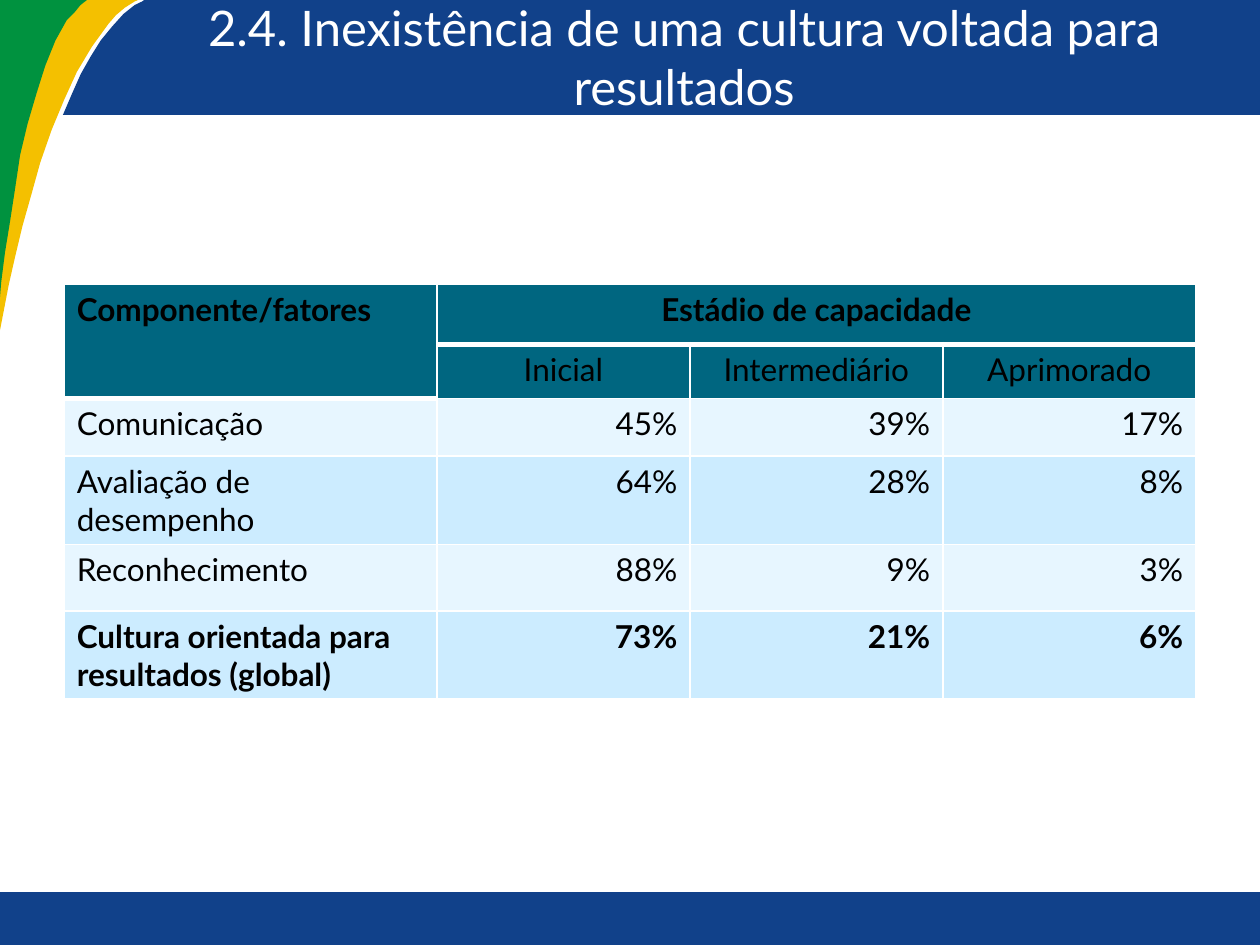
import pptx
import pptx.util
import pptx.dml.color
import pptx.enum.shapes
import pptx.enum.text
import pptx.oxml
import pptx.oxml.ns

Pt = pptx.util.Pt
ALIGN = pptx.enum.text.PP_ALIGN
FONT = "Lato"
BLUE, YELLOW, GREEN = "11418A", "F4C000", "00923F"
TEAL, PALE, LIGHT = "006680", "E7F6FF", "CCECFF"
WHITE, BLACK = "FFFFFF", "000000"

BAND = [(49.7, 0), (686.2, 0), (686.2, 67), (0, 67), (5, 55.4), (10.1, 43.9),
        (15.8, 33.8), (21.6, 24.5), (28.1, 16.6), (34.6, 9.4), (41, 4.3),
        (45.4, 2.2), (48.2, 0)]
YELLOW_SWEEP = [(0, 207.4), (0.7, 199.4), (2.9, 190.1), (7.9, 164.2), (11.5, 148.3),
                (15.8, 130.3), (20.9, 112.3), (25.9, 94.3), (32.4, 75.6), (39.6, 58.3),
                (46.8, 42.5), (55.4, 28.1), (64.8, 15.1), (69.1, 10.1), (74.2, 5.8),
                (79.9, 2.2), (85, 0), (0, 0)]
GREEN_SWEEP = [(0, 207.4), (0.7, 199.4), (1.4, 189.4), (3.6, 162.7), (5.8, 145.4),
               (8.6, 128.2), (11.5, 109.4), (14.4, 90), (18.7, 72), (23.8, 54.7),
               (28.8, 38.9), (34.6, 24.5), (41, 13), (45.4, 8.6), (48.9, 4.3),
               (52.6, 1.4), (56.9, 0), (0, 0)]

HEADINGS = ["Inicial", "Intermediário", "Aprimorado"]
ROWS = [
    ["Comunicação", "45%", "39%", "17%"],
    ["Avaliação de desempenho", "64%", "28%", "8%"],
    ["Reconhecimento", "88%", "9%", "3%"],
    ["Cultura orientada para resultados (global)", "73%", "21%", "6%"],
]


def rgb(color):
    return pptx.dml.color.RGBColor.from_string(color)


def paint(sp, color):
    sp.fill.solid()
    sp.fill.fore_color.rgb = rgb(color)
    sp.line.fill.background()
    sp.shadow.inherit = False


def write(tf, text, size, color, align, bold=False):
    p = tf.paragraphs[0]
    p.text = text
    p.alignment = align
    p.font.name = FONT
    p.font.size = Pt(size)
    p.font.bold = bold
    p.font.color.rgb = rgb(color)


def add_rect(s, left, top, width, height, color):
    sp = s.shapes.add_shape(pptx.enum.shapes.MSO_SHAPE.RECTANGLE,
                            Pt(left), Pt(top), Pt(width), Pt(height))
    paint(sp, color)
    return sp


def add_outline(s, left, top, points, color):
    spots = [(Pt(left + x), Pt(top + y)) for x, y in points]
    builder = s.shapes.build_freeform(*spots[0])
    builder.add_line_segments(spots[1:], close=True)
    paint(builder.convert_to_shape(), color)


def add_frame(s, left, top, width, height):
    add_outline(s, left + 36, top - 1.4, BAND, BLUE)
    add_outline(s, left - 2.9, top - 1.4, YELLOW_SWEEP, YELLOW)
    add_outline(s, left - 2.9, top - 1.4, GREEN_SWEEP, GREEN)
    add_rect(s, left, top + height - 30.2, width, 30.2, BLUE)


def add_title(s, left, top, width, height, text):
    sp = add_rect(s, left, top, width, height, BLUE)
    tf = sp.text_frame
    tf.word_wrap = True
    tf.vertical_anchor = pptx.enum.text.MSO_ANCHOR.MIDDLE
    tf.margin_left = tf.margin_right = 0
    tf.margin_top = tf.margin_bottom = Pt(3.6)
    write(tf, text, 28, WHITE, ALIGN.CENTER)


def set_borders(cell, bottom):
    tcPr = cell._tc.get_or_add_tcPr()
    widths = {"lnL": 1, "lnR": 1, "lnT": 1, "lnB": bottom}
    for i, (tag, width) in enumerate(widths.items()):
        ln = pptx.oxml.parse_xml(
            f'<a:{tag} {pptx.oxml.ns.nsdecls("a")} w="{Pt(width)}">'
            f'<a:solidFill><a:srgbClr val="{WHITE}"/></a:solidFill></a:{tag}>')
        tcPr.insert(i, ln)


def fill_cell(cell, text, color, align, bold=False):
    write(cell.text_frame, text, 18, BLACK, align, bold)
    cell.fill.solid()
    cell.fill.fore_color.rgb = rgb(color)


def add_capacity_table(s, left, top, width, height):
    table = s.shapes.add_table(len(ROWS) + 2, 4, Pt(left), Pt(top),
                               Pt(width), Pt(height)).table
    first = 213
    for i, column in enumerate(table.columns):
        column.width = Pt(first if i == 0 else (width - first) / 3)
    for row, row_height in zip(table.rows, [34.4, 31, 33, 50.4, 38, 50.4]):
        row.height = Pt(row_height)

    table.cell(0, 0).merge(table.cell(1, 0))
    table.cell(0, 1).merge(table.cell(0, 3))
    fill_cell(table.cell(0, 0), "Componente/fatores", TEAL, ALIGN.LEFT, True)
    fill_cell(table.cell(0, 1), "Estádio de capacidade", TEAL, ALIGN.CENTER, True)
    for c, heading in enumerate(HEADINGS, 1):
        fill_cell(table.cell(1, c), heading, TEAL, ALIGN.CENTER)
    for r, values in enumerate(ROWS):
        color = LIGHT if r % 2 else PALE
        for c, value in enumerate(values):
            align = ALIGN.RIGHT if c else ALIGN.LEFT
            fill_cell(table.cell(r + 2, c), value, color, align, r == len(ROWS) - 1)

    for r in range(len(table.rows)):
        for c in range(4):
            set_borders(table.cell(r, c), 3 if r == 0 or (r, c) == (1, 0) else 1)


def main():
    prs = pptx.Presentation()
    prs.slide_width, prs.slide_height = Pt(720), Pt(540)
    s = prs.slides.add_slide(prs.slide_layouts[6])
    add_frame(s, 0, 0, 720, 540)
    add_title(s, 87.8, 0, 606.2, 64.8,
              "2.4. Inexistência de uma cultura voltada para resultados")
    add_capacity_table(s, 36.7, 162.3, 646.6, 237.2)
    prs.save("out.pptx")


if __name__ == "__main__":
    main()
